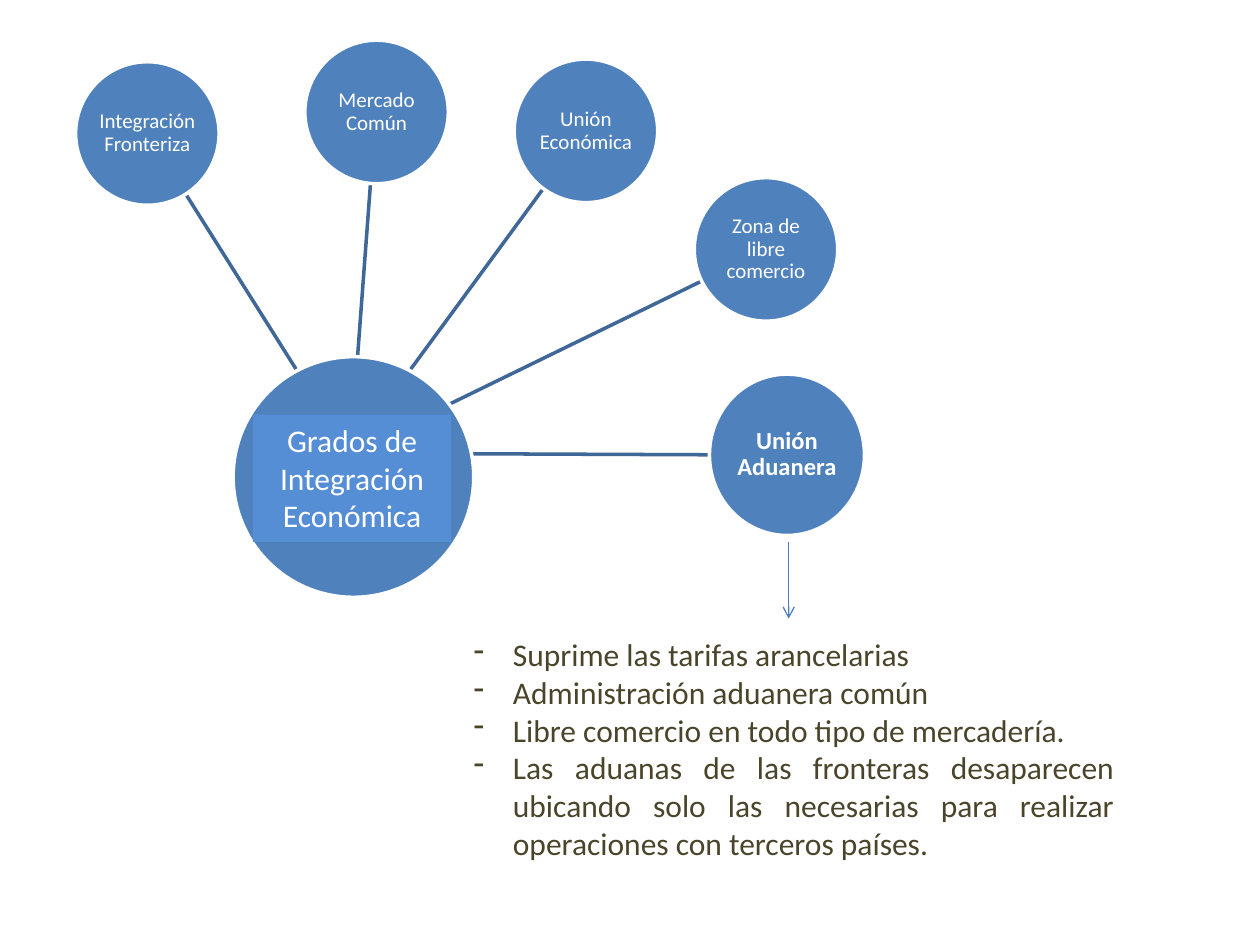
from pptx import Presentation
from pptx.dml.color import RGBColor
from pptx.enum import shapes as sh, text as tx
from pptx.oxml.ns import qn
from pptx.util import Pt
from lxml import etree

BLUE = RGBColor(0x4F, 0x81, 0xBD)
SPOKE = RGBColor(0x3F, 0x67, 0x97)
LABEL = RGBColor(0x55, 0x8E, 0xD5)
ARROW = RGBColor(0x4B, 0x7E, 0xBC)
WHITE = RGBColor(0xFF, 0xFF, 0xFF)
BROWN = RGBColor(0x4A, 0x45, 0x2A)
FONT = "Calibri"

# Text, left, top, width, height, size, bold, spoke start, spoke end
NODES = [
    ("Integración Fronteriza", 0, 12.3, 82, 82, 12, False, (126, 188), (63.4, 88.6)),
    ("Mercado Común", 131, 0, 82, 82, 12, False, (160.6, 188), (168.5, 82.1)),
    ("Unión Económica", 250.6, 10.8, 82, 82, 12, False, (191.5, 188), (267.1, 85)),
    ("Zona de libre comercio", 353.5, 78.5, 82, 82, 12, False, (204.5, 212.4), (357.8, 137.6)),
    ("Unión Aduanera", 362.2, 190.8, 88.6, 92.2, 14, True, (204.5, 236.2), (362.2, 236.9)),
]
POINTS = [
    "Suprime las tarifas arancelarias",
    "Administración aduanera común",
    "Libre comercio en todo tipo de mercadería.",
    "Las aduanas de las fronteras desaparecen ubicando solo las necesarias "
    "para realizar operaciones con terceros países.",
]


def style(para, size, color, align, bold=False):
    para.alignment = align
    font = para.font
    font.name, font.size, font.bold = FONT, Pt(size), bold
    font.color.rgb = color


def draw_line(slide, start, end, color, width):
    line = slide.shapes.add_connector(
        sh.MSO_CONNECTOR.STRAIGHT, *(Pt(v) for v in (*start, *end)))
    line.line.color.rgb = color
    line.line.width = Pt(width)
    etree.SubElement(line._element.spPr, qn("a:effectLst"))
    return line


def draw_shape(slide, kind, box, fill, edge=None):
    shape = slide.shapes.add_shape(kind, *(Pt(v) for v in box))
    shape.shadow.inherit = False
    shape.fill.solid()
    shape.fill.fore_color.rgb = fill
    if edge is None:
        shape.line.fill.background()
    else:
        shape.line.color.rgb = edge
        shape.line.width = Pt(2)
    return shape


def draw_wheel(slide, left, top):
    oval = sh.MSO_SHAPE.OVAL
    # Spokes lie behind the circles
    for *_, start, end in NODES:
        draw_line(slide, (left + start[0], top + start[1]),
                  (left + end[0], top + end[1]), SPOKE, 2)
    draw_shape(slide, oval, (left + 90, top + 180.8, 137.5, 137.5), BLUE, WHITE)

    # Outer circles
    for words, x, y, wide, high, size, bold, *_ in NODES:
        node = draw_shape(slide, oval, (left + x, top + y, wide, high), BLUE, WHITE)
        frame = node.text_frame
        frame.word_wrap = True
        frame.vertical_anchor = tx.MSO_ANCHOR.MIDDLE
        frame.margin_left = frame.margin_right = Pt(0.7)
        frame.margin_top = frame.margin_bottom = Pt(0.7)
        para = frame.paragraphs[0]
        para.text = words
        para.line_spacing = 0.9
        style(para, size, WHITE, tx.PP_ALIGN.CENTER, bold)

    # Hub label
    label = draw_shape(slide, sh.MSO_SHAPE.RECTANGLE,
                       (left + 101.5, top + 213.9, 113, 72.7), LABEL)
    frame = label.text_frame
    frame.word_wrap = True
    frame.vertical_anchor = tx.MSO_ANCHOR.TOP
    frame.paragraphs[0].text = "Grados de Integración Económica"
    style(frame.paragraphs[0], 18, WHITE, tx.PP_ALIGN.CENTER)


def draw_notes(slide, left, top, wide, high):
    # Arrow from the last circle down to the list
    mid = left + 187.2
    arrow = draw_line(slide, (mid, top - 49.7), (mid, top - 5.8), ARROW, 0.75)
    etree.SubElement(arrow.line._get_or_add_ln(), qn("a:tailEnd"), type="arrow")

    # Dashed list
    area = slide.shapes.add_textbox(Pt(left), Pt(top), Pt(wide), Pt(high))
    frame = area.text_frame
    frame.word_wrap = True
    for i, words in enumerate(POINTS):
        para = frame.add_paragraph() if i else frame.paragraphs[0]
        para.text = words
        style(para, 18, BROWN, tx.PP_ALIGN.JUSTIFY)
        props = para._p.get_or_add_pPr()
        props.set("marL", str(Pt(22.5)))
        props.set("indent", str(-Pt(22.5)))
        dash = etree.Element(qn("a:buChar"), char="-")
        props.insert_element_before(dash, "a:tabLst", "a:defRPr", "a:extLst")


def main():
    deck = Presentation()
    deck.slide_width, deck.slide_height = Pt(720), Pt(540)
    slide = deck.slides.add_slide(deck.slide_layouts[6])
    draw_wheel(slide, 43.2, 23)
    draw_notes(slide, 263.5, 359.3, 380.2, 159.8)
    deck.save("out.pptx")


if __name__ == "__main__":
    main()
